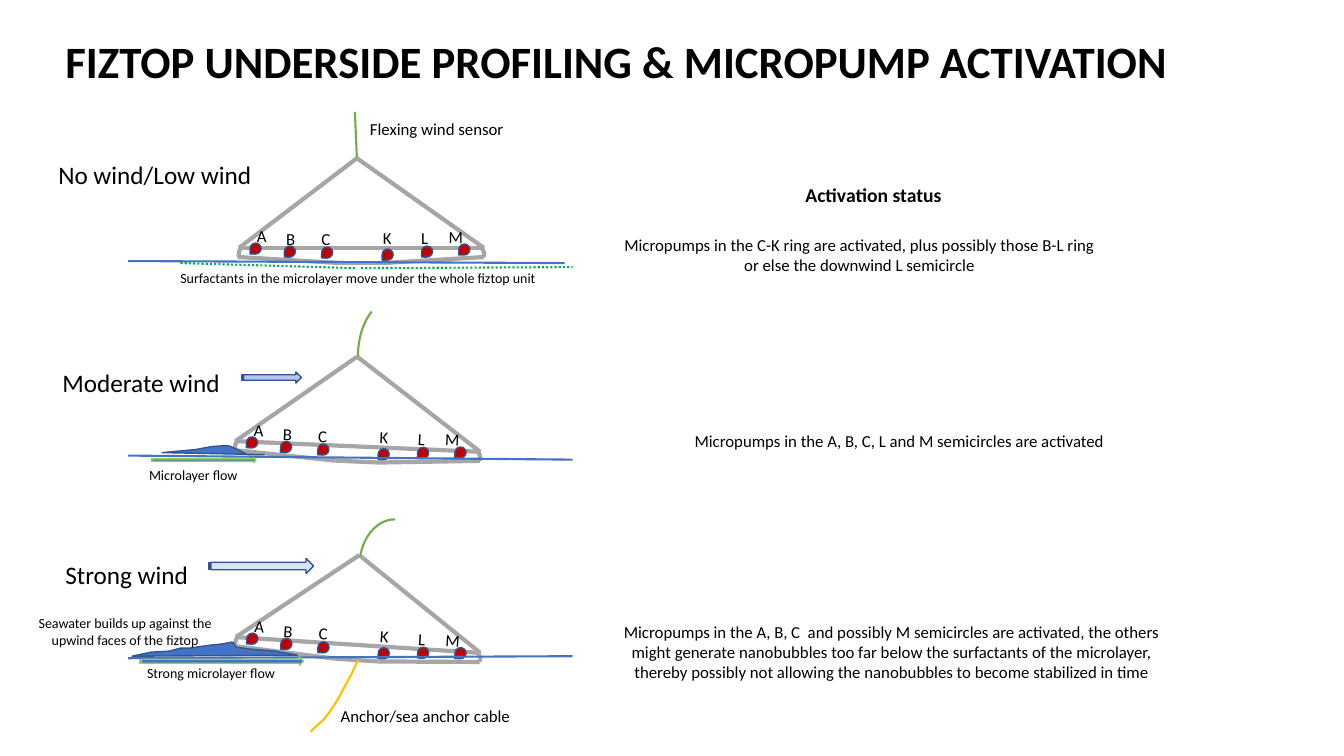
"""Build the slide on underside profiling and micropump activation."""
from itertools import pairwise

from pptx import Presentation
from pptx.dml.color import RGBColor
from pptx.enum.dml import MSO_LINE
from pptx.enum.shapes import MSO_CONNECTOR, MSO_SHAPE
from pptx.enum.text import MSO_AUTO_SIZE, PP_ALIGN
from pptx.oxml.ns import qn
from pptx.util import Inches, Pt

STRAIGHT = MSO_CONNECTOR.STRAIGHT
ARC = MSO_SHAPE.ARC
TEARDROP = MSO_SHAPE.TEAR
STRIPED_ARROW = MSO_SHAPE.STRIPED_RIGHT_ARROW
DOTTED = MSO_LINE.ROUND_DOT
CENTER = PP_ALIGN.CENTER
LEFT = PP_ALIGN.LEFT
FIT_SHAPE = MSO_AUTO_SIZE.SHAPE_TO_FIT_TEXT

FONT = "Calibri"
COLORS = {
    "text": "000000",
    "hull": "A6A6A6",
    "pump": "C00000",
    "outline": "325491",
    "sensor": "70AD47",
    "water": "4472C4",
    "flow": "92D050",
    "surfactant": "00B050",
    "cable": "FFC000",
    "moderate": "B4C7E7",
    "strong": "DAE3F3",
}

APEX, RIGHT_DECK, LEFT_DECK = (3.54, 1.57), (4.8, 2.46), (2.37, 2.46)
DECK = [APEX, RIGHT_DECK, LEFT_DECK, APEX]
KEEL = [(2.37, 2.55), (3.37, 2.61), (3.8, 2.61), (4.8, 2.55)]
HULL_ENDS = [((2.38, 2.39, 0.14, 0.2), 220), ((4.62, 2.43, 0.19, 0.14), 31.8)]
PUMP_SIZE = 0.11
PUMPS = [
    ("A", (2.48, 2.41), (2.45, 2.19, 0.3, 0.3)),
    ("B", (2.82, 2.44), (2.74, 2.22, 0.29, 0.3)),
    ("C", (3.19, 2.45), (3.09, 2.22, 0.29, 0.3)),
    ("K", (3.79, 2.47), (3.7, 2.21, 0.29, 0.3)),
    ("L", (4.18, 2.44), (4.08, 2.21, 0.27, 0.3)),
    ("M", (4.55, 2.42), (4.35, 2.2, 0.35, 0.3)),
]
FLOATS = [(0, 0, 0), (-0.02, 1.97, 2.5), (-0.01, 3.94, 3.7)]

WIND_SENSORS = [
    ((3.34, 3.18, 1.13, 0.71), 270, 200.26),
    ((3.47, 5.25, 0.83, 0.63), 278.9, 213.52),
]
WATERLINES = [
    ((1.27, 2.59), (5.6, 2.61)),
    ((1.27, 4.52), (5.68, 4.56)),
    ((1.27, 6.53), (5.68, 6.51)),
]
SURFACTANTS = [((3.58, 2.66), (5.68, 2.65)), ((1.79, 2.61), (3.52, 2.66))]
ARROWS = [
    ((1.5, 4.54, 1.04, 0.05), "water", "flow"),
    ((1.39, 6.52, 1.62, 0.08), "water", "flow"),
    ((2.07, 5.54, 1.04, 0.15), "strong", "outline"),
    ((2.4, 3.69, 0.59, 0.11), "moderate", "outline"),
]
CABLE = [(3.55, 6.55), (3.49, 6.68), (3.42, 6.81), (3.35, 6.94), (3.28, 7.05),
         (3.21, 7.14), (3.13, 7.21), (3.08, 7.26)]
WAVES = [
    [(1.61, 4.49), (1.94, 4.46), (2.1, 4.43), (2.25, 4.42), (2.29, 4.43),
     (2.46, 4.51), (2.62, 4.51)],
    [(2.95, 6.5), (1.31, 6.51), (1.5, 6.47), (1.68, 6.46), (1.79, 6.43),
     (1.88, 6.43), (2.09, 6.4), (2.2, 6.39), (2.3, 6.37), (2.32, 6.38),
     (2.34, 6.42), (2.49, 6.44), (2.73, 6.46), (2.95, 6.5)],
]
LABELS = [
    ("No wind/Low wind", (0.48, 1.53, 2.14, 0.4), 18),
    ("Moderate wind", (0.52, 3.59, 1.78, 0.4), 18),
    ("Strong wind", (0.55, 5.5, 1.43, 0.4), 18),
    ("Flexing wind sensor", (3.57, 1.13, 1.58, 0.3), 12),
    ("Anchor/sea anchor cable", (3.28, 6.95, 1.9, 0.3), 12),
    ("Microlayer flow", (1.38, 4.58, 1.09, 0.27), 10),
    ("Strong microlayer flow", (1.36, 6.54, 1.49, 0.27), 10),
    ("Surfactants in the microlayer move under the whole fiztop unit",
     (1.69, 2.62, 3.78, 0.27), 10),
    ("Micropumps in the A, B, C, L and M semicircles are activated",
     (6.79, 4.22, 4.27, 0.3), 12),
]
CENTERED_NOTES = [
    ("Micropumps in the C-K ring are activated, plus possibly those B-L ring\n"
     "or else the downwind L semicircle", (6.07, 2.28, 4.91, 0.5), 12),
    ("Seawater builds up against the\nupwind faces of the fiztop",
     (0.25, 6.05, 1.98, 0.44), 10),
    ("Micropumps in the A, B, C  and possibly M semicircles are activated, the others\n"
     "might generate nanobubbles too far below the surfactants of the microlayer,\n"
     "thereby possibly not allowing the nanobubbles to become stabilized in time",
     (6.02, 6.12, 5.65, 0.71), 12),
]


def rgb(name):
    """Return the named colour."""
    return RGBColor.from_string(COLORS[name])


def add_text(shapes, text, box, size, bold=False, align=LEFT):
    """Add an unwrapped text box."""
    shape = shapes.add_textbox(*map(Inches, box))
    frame = shape.text_frame
    frame.text = text
    frame.word_wrap = False
    frame.auto_size = FIT_SHAPE
    for paragraph in frame.paragraphs:
        paragraph.alignment = align
        for run in paragraph.runs:
            run.font.name = FONT
            run.font.size = Pt(size)
            run.font.bold = bold
            run.font.color.rgb = rgb("text")


def add_line(shapes, start, end, color, width=1.5, dash=None):
    """Add a straight line between two points."""
    line = shapes.add_connector(STRAIGHT, *map(Inches, (*start, *end)))
    line.line.color.rgb = rgb(color)
    line.line.width = Pt(width)
    line.line.dash_style = dash
    line._element.spPr.append(line._element.makeelement(qn("a:effectLst"), {}))


def style_shape(shape, fill, line, width):
    """Set the fill and outline of a shape and drop its shadow."""
    shape.shadow.inherit = False
    if fill:
        shape.fill.solid()
        shape.fill.fore_color.rgb = rgb(fill)
    else:
        shape.fill.background()
    shape.line.color.rgb = rgb(line)
    shape.line.width = Pt(width)


def add_preset(shapes, kind, box, fill, line, width=1, rotation=0):
    """Add a styled preset shape."""
    shape = shapes.add_shape(kind, *map(Inches, box))
    shape.rotation = rotation
    style_shape(shape, fill, line, width)
    return shape


def add_outline(shapes, points, fill, line, width, close):
    """Add a freeform through the points."""
    corners = [(Inches(x), Inches(y)) for x, y in points]
    builder = shapes.build_freeform(*corners[0])
    builder.add_line_segments(corners[1:], close=close)
    style_shape(builder.convert_to_shape(), fill, line, width)


def add_float(slide, shift_x, shift_y, tilt):
    """Add one float with its micropumps, moved and tilted as a group."""
    group = slide.shapes.add_group_shape()
    shapes = group.shapes
    for start, end in (*pairwise(DECK), *pairwise(KEEL)):
        add_line(shapes, start, end, "hull", 3)
    for box, rotation in HULL_ENDS:
        add_preset(shapes, ARC, box, None, "hull", 3, rotation)
    for letter, corner, label_box in PUMPS:
        pump_box = (*corner, PUMP_SIZE, PUMP_SIZE)
        add_preset(shapes, TEARDROP, pump_box, "pump", "outline", rotation=180)
        add_text(shapes, letter, label_box, 12)
    group.left += Inches(shift_x)
    group.top += Inches(shift_y)
    group.rotation = tilt


def main():
    """Build and save the slide."""
    presentation = Presentation()
    presentation.slide_width = Inches(13.33)
    presentation.slide_height = Inches(7.5)
    slide = presentation.slides.add_slide(presentation.slide_layouts[6])
    shapes = slide.shapes
    add_text(shapes, "FIZTOP UNDERSIDE PROFILING & MICROPUMP ACTIVATION",
             (0.55, 0.29, 11.23, 0.64), 32, bold=True)
    add_line(shapes, (3.52, 1.11), APEX, "sensor")
    for placement in FLOATS:
        add_float(slide, *placement)
    for box, rotation, end_angle in WIND_SENSORS:
        sensor = add_preset(shapes, ARC, box, None, "sensor", 1.5, rotation)
        sensor.adjustments[1] = end_angle
    add_outline(shapes, CABLE, None, "cable", 1.5, close=False)
    for start, end in WATERLINES:
        add_line(shapes, start, end, "water")
    for box, fill, line in ARROWS:
        add_preset(shapes, STRIPED_ARROW, box, fill, line)
    for wave in WAVES:
        add_outline(shapes, wave, "water", "outline", 1, close=True)
    for start, end in SURFACTANTS:
        add_line(shapes, start, end, "surfactant", dash=DOTTED)
    for text, box, size in LABELS:
        add_text(shapes, text, box, size)
    for text, box, size in CENTERED_NOTES:
        add_text(shapes, text, box, size, align=CENTER)
    add_text(shapes, "Activation status", (7.89, 1.77, 1.57, 0.34), 14, bold=True)
    presentation.save("out.pptx")


if __name__ == "__main__":
    main()
